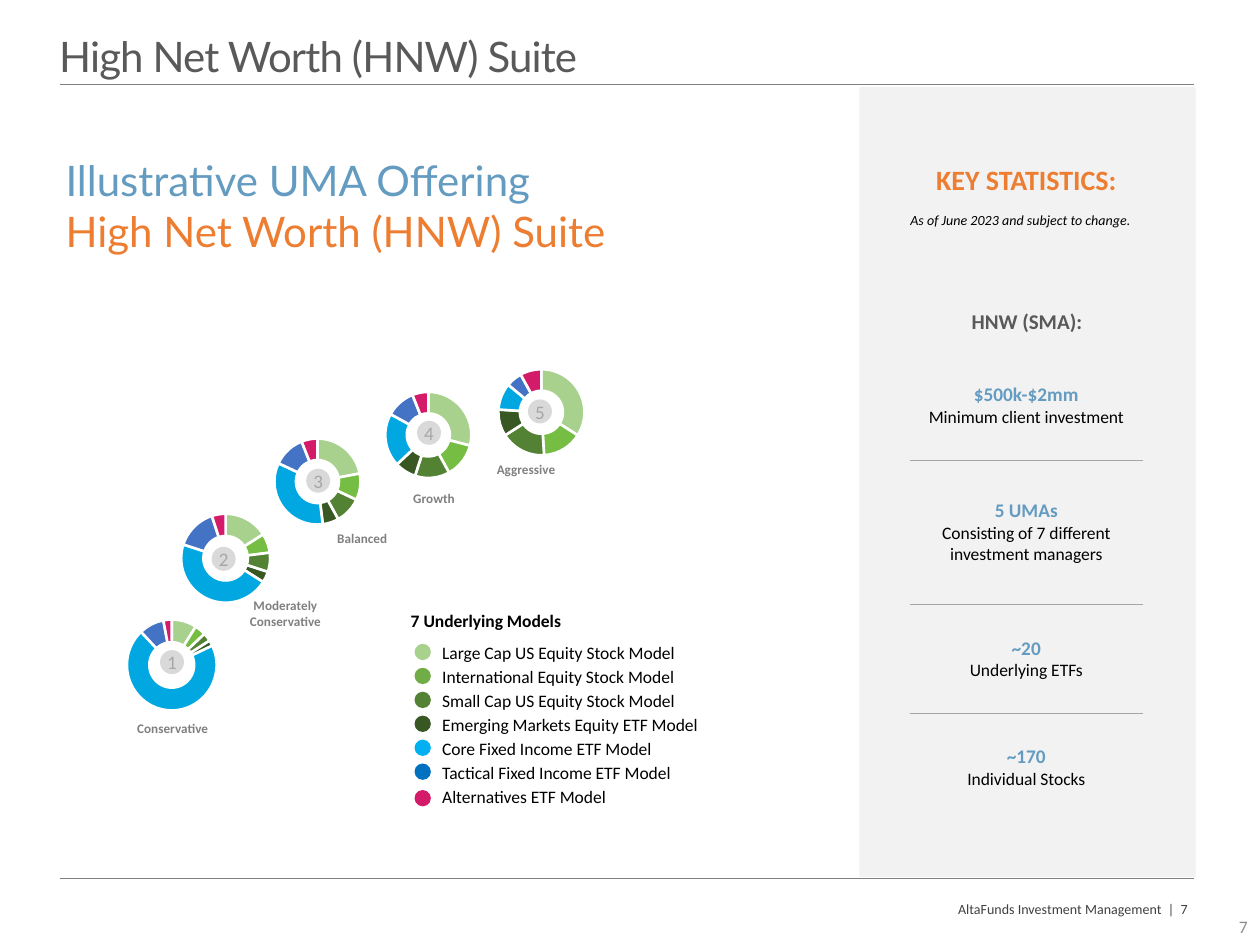
from dataclasses import dataclass

from lxml.etree import SubElement
from pptx import Presentation
from pptx.chart.data import CategoryChartData
from pptx.dml.color import RGBColor
from pptx.enum.chart import XL_CHART_TYPE as ChartType
from pptx.enum.shapes import MSO_CONNECTOR as Connector, MSO_SHAPE as Shape
from pptx.enum.text import MSO_ANCHOR as Anchor, MSO_AUTO_SIZE as AutoSize, PP_ALIGN as Align
from pptx.oxml.ns import qn
from pptx.util import Inches, Pt


@dataclass(frozen=True)
class Theme:
    body: str = "Calibri"
    display: str = "Lato"
    black: str = "000000"
    white: str = "FFFFFF"
    panel: str = "F2F2F2"
    badge: str = "D9D9D9"
    rule: str = "A6A6A6"
    label: str = "808080"
    page: str = "8C8C8C"
    footer: str = "404040"
    heading: str = "595959"
    blue: str = "649BC0"
    orange: str = "ED7D31"
    slices: tuple = ("A9D18E", "75BD43", "548235", "385723", "00A7E1", "4472C4", "D41B69")
    dots: tuple = ("A9D18E", "70AD47", "548235", "385723", "00B0F0", "0070C0", "D41B69")
    title_size: float = 24
    stat_head: float = 16
    section: float = 12
    figure: float = 11
    number: float = 10.9
    text: float = 10
    small: float = 8
    caption: float = 7.5


THEME = Theme()
NO_INSETS = (0, 0, 0, 0)
BOX_INSETS = (0.1, 0.05, 0.1, 0.05)

MODELS = ("Large Cap US Equity Stock Model", "International Equity Stock Model",
          "Small Cap US Equity Stock Model", "Emerging Markets Equity ETF Model",
          "Core Fixed Income ETF Model", "Tactical Fixed Income ETF Model",
          "Alternatives ETF Model")

# Chart corner, plot area as fractions, values, badge corner, label and its box
PORTFOLIOS = (
    ((0.97, 4.86), (0.05, 0.06, 0.95, 0.94), (9, 4, 3, 2, 70, 9, 3),
     (1.27, 5.16), "Conservative", (0.94, 5.67, 0.86, 0.26)),
    ((1.4, 4.04), (0.05, 0.03, 0.93, 0.93), (16, 7, 7, 4, 46, 15, 5),
     (1.68, 4.34), "Moderately Conservative", (1.85, 4.69, 0.83, 0.35)),
    ((2.14, 3.42), (0.05, 0.06, 0.9, 0.9), (22, 10, 10, 6, 34, 12, 6),
     (2.43, 3.72), "Balanced", (2.46, 4.16, 0.83, 0.22)),
    ((3.02, 3.05), (0.05, 0.06, 0.9, 0.9), (29, 13, 13, 8, 20, 11, 6),
     (3.31, 3.34), "Growth", (3.03, 3.84, 0.83, 0.22)),
    ((3.91, 2.87), (0.06, 0.06, 0.9, 0.9), (34, 15, 17, 10, 10, 6, 8),
     (4.19, 3.17), "Aggressive", (3.76, 3.61, 0.83, 0.22)),
)

STATISTICS = (("$500k-$2mm", "Minimum client investment", 0.86),
              ("5 UMAs", "Consisting of 7 different investment managers", 1.15),
              ("~20", "Underlying ETFs", 0.86),
              ("~170", "Individual Stocks", 0.86))


def inches(*values):
    return [Inches(value) for value in values]


def style_font(font, color, **values):
    for name, value in {"name": THEME.body, "bold": False, **values}.items():
        setattr(font, name, Pt(value) if name == "size" else value)
    font.color.rgb = RGBColor.from_string(color)


def set_insets(target, insets):
    for side, value in zip(("left", "top", "right", "bottom"), insets):
        setattr(target, f"margin_{side}", Inches(value))


def write(frame, lines, align=Align.LEFT, insets=BOX_INSETS, anchor=Anchor.TOP, wrap=True):
    """Fill a frame with one paragraph for each (text, color, font values)."""
    for name, value in {"auto_size": AutoSize.NONE, "word_wrap": wrap,
                        "vertical_anchor": anchor}.items():
        setattr(frame, name, value)
    set_insets(frame, insets)
    write_lines(frame, lines, align)


def write_lines(frame, lines, align):
    for index, (text, color, values) in enumerate(lines):
        para = frame.paragraphs[0] if index == 0 else frame.add_paragraph()
        para.alignment = align
        span = para.add_run()
        span.text = text
        style_font(span.font, color, **values)


def add_text(page, at, text, color, align=Align.CENTER, layout=None, **values):
    box = page.shapes.add_textbox(*inches(*at))
    write(box.text_frame, [(text, color, values)], align, **(layout or {}))


def place(shape, at):
    for name, value in zip(("left", "top", "width", "height"), inches(*at)):
        setattr(shape, name, value)


def add_solid(page, kind, at, color):
    shape = page.shapes.add_shape(kind, *inches(*at))
    shape.shadow.inherit = False
    shape.fill.solid()
    shape.fill.fore_color.rgb = RGBColor.from_string(color)
    shape.line.fill.background()
    return shape


def add_rule(page, y):
    rule = page.shapes.add_connector(Connector.STRAIGHT, *inches(0.48, y, 9.48, y))
    rule.line.color.rgb = RGBColor.from_string(THEME.label)
    rule.line.width = Pt(0.25)
    SubElement(rule._element.spPr, qn("a:effectLst"))


def add_headings(page):
    title, body = page.placeholders
    place(title, (0.47, 0.3, 9, 0.35))
    text = "High Net Worth (HNW) Suite"
    display = {"name": THEME.display, "size": THEME.title_size}
    write(title.text_frame, [(text, THEME.heading, display)], insets=NO_INSETS)
    para = title.text_frame.paragraphs[0]
    para.line_spacing = 0.86
    para.runs[0].font._element.set("spc", "-50")

    place(body, (0.52, 1.23, 4.37, 0.83))
    write(body.text_frame, [("Illustrative UMA Offering", THEME.blue, display),
                            (text, THEME.orange, display)], insets=NO_INSETS)
    for para in body.text_frame.paragraphs:
        para.space_before = Pt(0)
        props = para._p.get_or_add_pPr()
        props.set("marL", "0")
        props.set("indent", "0")
        SubElement(props, qn("a:buNone"))


def add_doughnut(page, corner, plot_area, values):
    data = CategoryChartData()
    data.categories = [str(number) for number in range(1, len(values) + 1)]
    data.add_series("Series 1", values)
    chart = page.shapes.add_chart(ChartType.DOUGHNUT, *inches(*corner, 0.76, 0.79), data).chart
    chart.has_legend = chart.has_title = False
    style_font(chart.font, THEME.black, size=THEME.text)
    for index, color in enumerate(THEME.slices):
        style = chart.plots[0].series[0].points[index].format
        style.fill.solid()
        style.fill.fore_color.rgb = RGBColor.from_string(color)
        style.line.color.rgb = RGBColor.from_string(THEME.white)
        style.line.width = Pt(1.5)

    # Fixed inner plot area
    area = chart._chartSpace.chart.plotArea
    for old in area.findall(qn("c:layout")):
        area.remove(old)
    layout = SubElement(area, qn("c:layout"))
    area.insert(0, layout)
    manual = SubElement(layout, qn("c:manualLayout"))
    settings = [("layoutTarget", "inner"), ("xMode", "edge"), ("yMode", "edge"),
                *zip("xywh", plot_area)]
    for name, value in settings:
        SubElement(manual, qn(f"c:{name}"), val=str(value))


def add_portfolio(page, number, corner, plot_area, values, badge_at, label, label_at):
    add_doughnut(page, corner, plot_area, values)
    badge = add_solid(page, Shape.OVAL, (*badge_at, 0.19, 0.19), THEME.badge)
    write(badge.text_frame, [(str(number), THEME.rule, {"size": THEME.number})],
          Align.CENTER, NO_INSETS, Anchor.MIDDLE, wrap=False)
    add_text(page, label_at, label, THEME.label, size=THEME.caption, bold=True)


def add_grid(page, at, widths, heights):
    table = page.shapes.add_table(len(heights), len(widths),
                                  *inches(*at, sum(widths), sum(heights))).table
    table.first_row = table.horz_banding = False
    for column, width in zip(table.columns, widths):
        column.width = Inches(width)
    for row, height in zip(table.rows, heights):
        row.height = Inches(height)
    return table


def fill_cell(cell, lines, align=Align.LEFT, insets=NO_INSETS, fill=None, rule_sides=()):
    cell.vertical_anchor = Anchor.MIDDLE
    set_insets(cell, insets)
    write_lines(cell.text_frame, lines, align)
    if not lines:
        SubElement(cell.text_frame.paragraphs[0]._p, qn("a:endParaRPr"), sz="800")
    props = cell._tc.get_or_add_tcPr()
    for side in "LRTB":
        line = SubElement(props, qn(f"a:ln{side}"), w="6350")
        if side in rule_sides:
            solid = SubElement(line, qn("a:solidFill"))
            SubElement(solid, qn("a:srgbClr"), val=THEME.rule)
        else:
            SubElement(line, qn("a:noFill"))
    if fill:
        cell.fill.solid()
        cell.fill.fore_color.rgb = RGBColor.from_string(fill)
    else:
        cell.fill.background()


def add_legend(page):
    table = add_grid(page, (3.26, 4.77), (0.24, 2.2), [0.32] + [0.19] * len(MODELS))
    table.cell(0, 0).merge(table.cell(0, 1))
    table.cell(2, 0).merge(table.cell(4, 0))
    heading = ("7 Underlying Models", THEME.black, {"size": THEME.text, "bold": True})
    fill_cell(table.cell(0, 0), [heading], fill=THEME.white)
    for row, (model, color) in enumerate(zip(MODELS, THEME.dots), 1):
        fill_cell(table.cell(row, 0), [], fill=THEME.white)
        fill_cell(table.cell(row, 1), [(model, THEME.black, {"size": THEME.text})],
                  insets=(0.01, 0.01, 0.01, 0), fill=THEME.white)
        top = 6.27 if row == len(MODELS) else 5.11 + 0.19 * (row - 1)
        add_solid(page, Shape.OVAL, (3.29, top, 0.13, 0.13), color)


def add_statistics(page):
    centred = {"insets": NO_INSETS, "wrap": False}
    add_text(page, (7.42, 1.29, 1.45, 0.27), "KEY STATISTICS:", THEME.orange,
             layout=centred, size=THEME.stat_head, bold=True)
    add_text(page, (7.01, 1.63, 2.28, 0.24), "As of June 2023 and subject to change.",
             THEME.black, layout={"insets": (0, 0.05, 0.1, 0.05)}, size=THEME.small, italic=True)
    add_text(page, (7.36, 2.4, 1.58, 0.3), "HNW (SMA):", THEME.heading,
             size=THEME.section, bold=True)
    table = add_grid(page, (7.22, 2.79), [1.85], [height for *_, height in STATISTICS])
    last = len(STATISTICS) - 1
    for row, (figure, meaning, _) in enumerate(STATISTICS):
        lines = [(figure, THEME.blue, {"size": THEME.figure, "bold": True}),
                 (meaning, THEME.black, {"size": THEME.text})]
        sides = ("T" if row > 0 else "") + ("B" if row < last else "")
        fill_cell(table.cell(row, 0), lines, Align.CENTER, rule_sides=sides)


def main():
    deck = Presentation()
    deck.slide_width, deck.slide_height = inches(10, 7.5)
    page = deck.slides.add_slide(deck.slide_layouts[1])

    # Frame, footer and page number
    for y in (0.67, 6.97):
        add_rule(page, y)
    add_text(page, (6.91, 7.1, 2.62, 0.24), "AltaFunds Investment Management  |  7",
             THEME.footer, Align.RIGHT, size=THEME.small)
    add_text(page, (7.75, 7.15, 2.25, 0.4), "7", THEME.page, Align.RIGHT,
             {"anchor": Anchor.MIDDLE}, size=THEME.text)
    add_headings(page)

    # Side panel
    add_solid(page, Shape.RECTANGLE, (6.82, 0.69, 2.67, 6.27), THEME.panel)
    add_statistics(page)

    # Models and portfolios
    add_legend(page)
    for number, portfolio in enumerate(PORTFOLIOS, 1):
        add_portfolio(page, number, *portfolio)
    deck.save("out.pptx")


if __name__ == "__main__":
    main()
